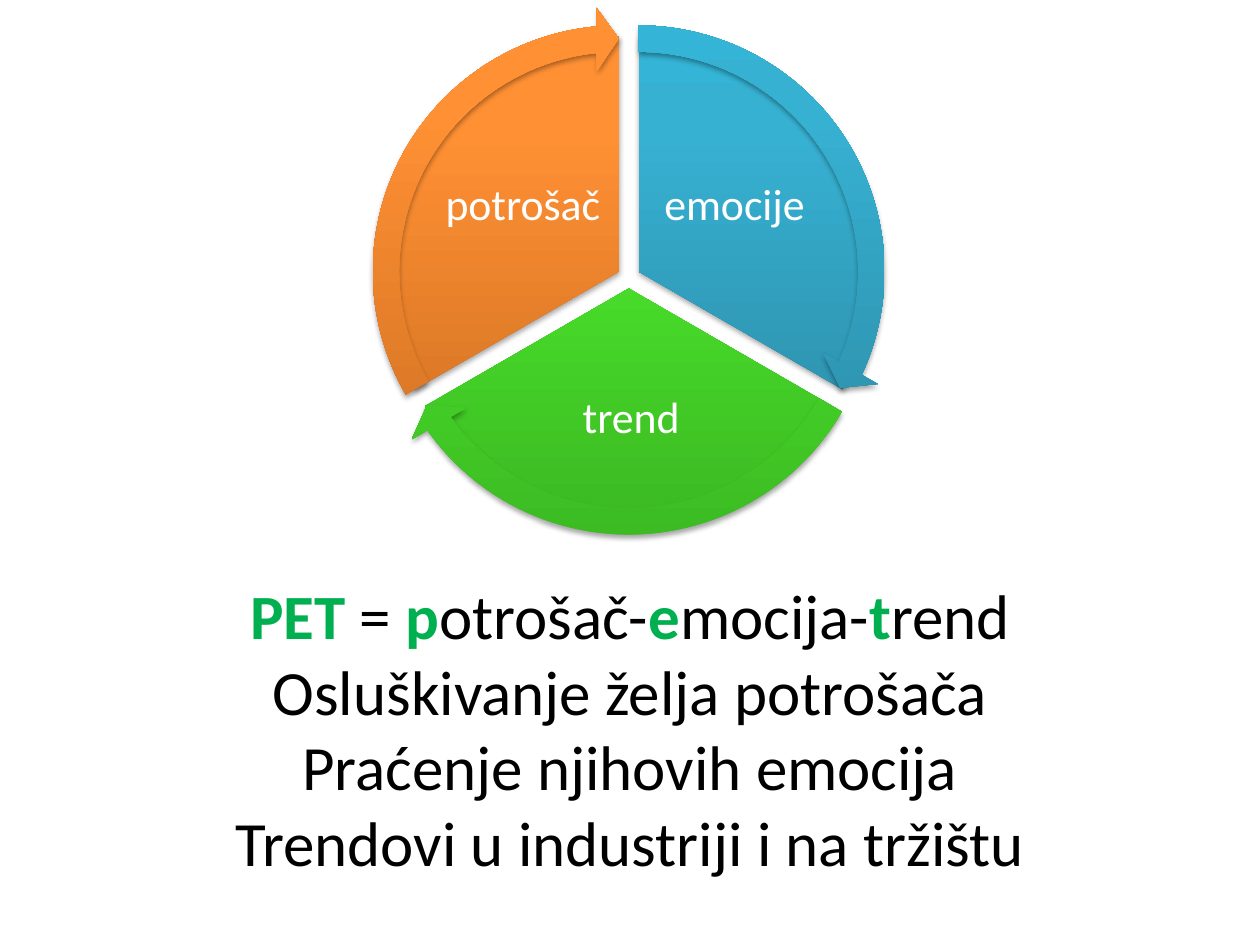
import math
from lxml import etree
from pptx import Presentation, util as u
from pptx.dml.color import RGBColor
from pptx.enum import shapes, text
from pptx.oxml import ns

WIDE, HIGH = 10, 7.5
FONT = "Calibri"
GREEN, BLACK, WHITE = "00B050", "000000", "FFFFFF"
TURN = 216
PIE, ARROW = 0.89, 1
GAP = 0.09

PARTS = [
    ("emocije", ("2A88A2", "37B1D2", "34B4D6"), 0.84, -0.56, 1.33, 1.11),
    ("trend", ("3CB923", "4EF02E", "4CF52A"), 0.02, 1.13, 2, 0.98),
    ("potrošač", ("CC6E20", "FF9034", "FF9136"), -0.84, -0.56, 1.33, 1.11),
]

LINES = [
    [("PET ", True), ("= ", False), ("p", True), ("otrošač-", False),
     ("e", True), ("mocija-", False), ("t", True), ("rend", False)],
    [("Osluškivanje želja potrošača", False)],
    [("Praćenje njihovih emocija", False)],
    [("Trendovi u industriji i na tržištu", False)],
]


def color(code):
    return RGBColor.from_string(code)


def span(x, y, w, h):
    return [u.Inches(v) for v in (x - w / 2, y - h / 2, w, h)]


def style(run, size, code, bold=False):
    font = run.font
    font.name, font.size, font.bold = FONT, u.Pt(size), bold
    font.color.rgb = color(code)


def node(root, tag, **attrs):
    return etree.SubElement(root, ns.qn("a:" + tag), attrs)


def paint(shape, tones):
    shape.line.fill.background()
    shape.fill.gradient()
    shape.fill.gradient_angle = 90
    props = shape.element.spPr
    stops = props.find(".//" + ns.qn("a:gsLst"))
    for stop in list(stops):
        stops.remove(stop)
    for place, tone in zip((0, 80, 100), tones):
        stop = node(stops, "gs", pos=str(place * 1000))
        node(stop, "srgbClr", val=tone)
    glow = node(node(props, "effectLst"), "outerShdw", blurRad=str(u.Pt(3.1)),
                dist=str(u.Pt(1.8)), dir="5400000", rotWithShape="0")
    node(node(glow, "srgbClr", val=BLACK), "alpha", val="35000")


def sector(group, kind, x, y, size, marks, tones):
    shape = group.shapes.add_shape(kind, *span(x, y, size, size))
    for i, mark in enumerate(marks):
        shape.adjustments[i] = mark
    paint(shape, tones)


def label(group, words, x, y, w, h):
    frame = group.shapes.add_textbox(*span(x, y, w, h)).text_frame
    frame.word_wrap = True
    frame.vertical_anchor = text.MSO_ANCHOR.MIDDLE
    frame.margin_left = frame.margin_right = u.Inches(0.03)
    frame.margin_top = frame.margin_bottom = u.Inches(0.03)
    frame.text = words
    para = frame.paragraphs[0]
    para.alignment = text.PP_ALIGN.CENTER
    para.line_spacing = 0.9
    style(para.runs[0], 25, WHITE)


def cycle(slide, x, y, size):
    group = slide.shapes.add_group_shape()
    step = TURN / len(PARTS)
    hubs = []
    for i, (words, tones, dx, dy, w, h) in enumerate(PARTS):
        angle = math.radians(120 * i - 30)
        start, end = (162 + step * i) % TURN, 18 + step * i
        hub = x + GAP * math.cos(angle), y + GAP * math.sin(angle)
        hubs.append((hub, start, end, tones))
        sector(group, shapes.MSO_SHAPE.PIE, *hub, size * PIE, (start, end), tones)
        label(group, words, x + dx, y + dy, w, h)
    for hub, start, end, tones in hubs:
        marks = (0.05, 3.28, end - 3.28, start, 0.06)
        sector(group, shapes.MSO_SHAPE.CIRCULAR_ARROW, *hub, size * ARROW, marks, tones)


def motto(slide, x, y, w, h):
    frame = slide.shapes.add_textbox(*span(x, y, w, h)).text_frame
    frame.word_wrap = True
    frame.vertical_anchor = text.MSO_ANCHOR.MIDDLE
    for i, line in enumerate(LINES):
        para = frame.add_paragraph() if i else frame.paragraphs[0]
        para.alignment = text.PP_ALIGN.CENTER
        for words, key in line:
            run = para.add_run()
            run.text = words
            style(run, 36, GREEN if key else BLACK, key)


def main():
    deck = Presentation()
    deck.slide_width, deck.slide_height = u.Inches(WIDE), u.Inches(HIGH)
    slide = deck.slides.add_slide(deck.slide_layouts[6])
    motto(slide, WIDE / 2, HIGH * 0.77, WIDE * 0.85, HIGH * 0.34)
    cycle(slide, WIDE * 0.5 - 0.01, 2.2, HIGH * 0.56)
    deck.save("out.pptx")


if __name__ == "__main__":
    main()
